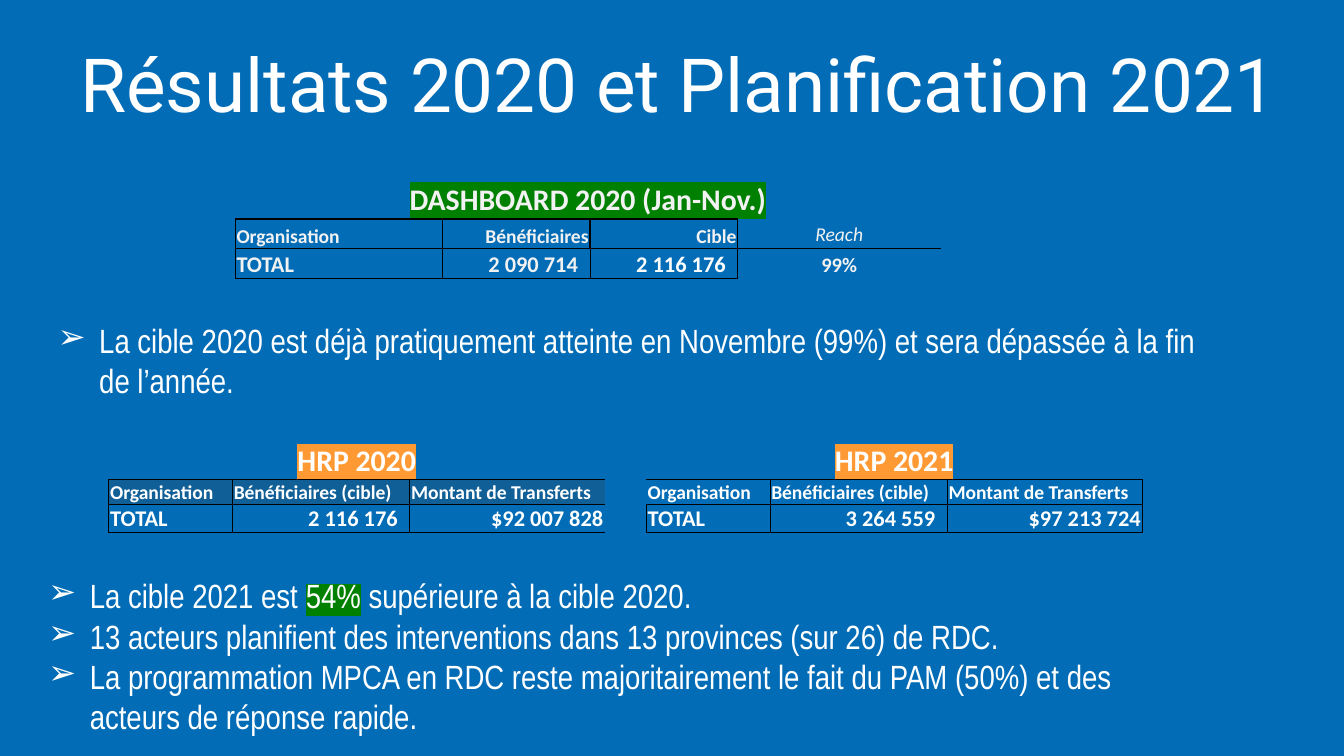
import pptx
import pptx.dml.color
import pptx.enum.text
import pptx.oxml
import pptx.oxml.ns
import pptx.util

Inches = pptx.util.Inches
Pt = pptx.util.Pt
RGBColor = pptx.dml.color.RGBColor
ALIGN = pptx.enum.text.PP_ALIGN
ANCHOR = pptx.enum.text.MSO_ANCHOR
qn = pptx.oxml.ns.qn

BLUE = RGBColor(0x02, 0x6C, 0xB6)
DARK_BLUE = RGBColor(0x10, 0x5F, 0x97)
WHITE = RGBColor(0xFF, 0xFF, 0xFF)
PALE = RGBColor(0xF2, 0xF2, 0xF2)
GREEN = RGBColor(0x00, 0x80, 0x00)
ORANGE = RGBColor(0xFF, 0x99, 0x33)
BLACK = RGBColor(0x00, 0x00, 0x00)
NO_STYLE = "{2D5ABB26-0587-4C30-8999-92F81FD0307C}"

SLIDE_WIDTH = 10
SLIDE_HEIGHT = SLIDE_WIDTH * 9 / 16

TITLE = "Résultats 2020 et Planification 2021"
# Each paragraph is a list of (text, highlight) runs.
REACH_POINTS = [[("La cible 2020 est déjà pratiquement atteinte en Novembre (99%) "
                  "et sera dépassée à la fin de l’année.", None)]]
PLAN_POINTS = [
    [("La cible 2021 est ", None), ("54%", GREEN), (" supérieure à la cible 2020.", None)],
    [("13 acteurs planifient des interventions dans 13 provinces (sur 26) de RDC.", None)],
    [("La programmation MPCA en RDC reste majoritairement le fait du PAM (50%) "
      "et des acteurs de réponse rapide.", None)],
]

DASHBOARD_COLUMNS = [1.54, 1.1, 1.1, 1.51]
DASHBOARD_ROWS = [0.29, 0.22, 0.22]
DASHBOARD_HEADER = ["Organisation", "Bénéficiaires", "Cible"]
DASHBOARD_TOTAL = ["TOTAL", "2 090 714", "2 116 176"]

PLAN_COLUMNS = [0.92, 1.32, 1.45]
PLAN_GAP = 0.31
PLAN_ROWS = [0.27, 0.18, 0.21]
PLAN_HEADER = ["Organisation", "Bénéficiaires (cible)", "Montant de Transferts"]
# title, totals, header fill, border sides of header and total cells
PLANS = [
    ("HRP 2020", ["TOTAL", "2 116 176", "$92 007 828"], DARK_BLUE,
     ["LTRB", "LTRB", "LTB"], ["LTRB", "LTRB", "LTB"]),
    ("HRP 2021", ["TOTAL", "3 264 559", "$97 213 724"], None,
     ["TRB", "LTRB", "LTRB"], ["LTRB", "LTRB", "LTRB"]),
]
TRAILING_GAP = 0.09


def highlight(run, color):
    properties = run._r.get_or_add_rPr()
    mark = properties.makeelement(qn("a:highlight"), {})
    mark.append(mark.makeelement(qn("a:srgbClr"), {"val": str(color)}))
    properties.append(mark)


def add_bullet(paragraph, character, font):
    properties = paragraph._p.get_or_add_pPr()
    properties.set("marL", str(Inches(0.31)))
    properties.set("indent", str(-Inches(0.31)))
    properties.append(properties.makeelement(qn("a:buFont"), {"typeface": font}))
    properties.append(properties.makeelement(qn("a:buChar"), {"char": character}))


def add_text(slide, left, top, width, height, paragraphs, font, size, bullet=None):
    box = slide.shapes.add_textbox(Inches(left), Inches(top), Inches(width), Inches(height))
    frame = box.text_frame
    frame.word_wrap = True
    for index, runs in enumerate(paragraphs):
        paragraph = frame.paragraphs[0] if index == 0 else frame.add_paragraph()
        if bullet:
            add_bullet(paragraph, bullet, font)
        paragraph.font.name = font
        paragraph.font.size = Pt(size)
        paragraph.font.color.rgb = WHITE
        for text, color in runs:
            run = paragraph.add_run()
            run.text = text
            if color:
                highlight(run, color)


def add_table(slide, left, top, columns, rows):
    """Add a plain, transparent table without style or banding."""
    frame = slide.shapes.add_table(len(rows), len(columns), Inches(left), Inches(top),
                                   Inches(sum(columns)), Inches(sum(rows)))
    table = frame.table
    table.first_row = table.horz_banding = False
    table._tbl.tblPr.find(qn("a:tableStyleId")).text = NO_STYLE
    for column, width in zip(table.columns, columns):
        column.width = Inches(width)
    for row, height in zip(table.rows, rows):
        row.height = Inches(height)
    for cell in table.iter_cells():
        cell.margin_left = cell.margin_right = cell.margin_top = Inches(0.01)
        cell.margin_bottom = 0
        cell.text_frame.paragraphs[0].font.size = Pt(10.5)
    return table


def set_borders(cell, sides, weight):
    """Draw the given sides in black and clear the others."""
    properties = cell._tc.get_or_add_tcPr()
    for position, side in enumerate("LRTB"):
        line = properties.makeelement(qn("a:ln" + side), {"w": str(Pt(weight))})
        if side in sides:
            fill = line.makeelement(qn("a:solidFill"), {})
            fill.append(fill.makeelement(qn("a:srgbClr"), {"val": str(BLACK)}))
        else:
            fill = line.makeelement(qn("a:noFill"), {})
        line.append(fill)
        properties.insert(position, line)


def fill_cell(cell, text, size, align=ALIGN.LEFT, anchor=ANCHOR.BOTTOM, color=PALE,
              bold=True, fill=None, mark=None, sides="", weight=0.5):
    cell.vertical_anchor = anchor
    if fill:
        cell.fill.solid()
        cell.fill.fore_color.rgb = fill
    else:
        cell.fill.background()
    paragraph = cell.text_frame.paragraphs[0]
    paragraph.alignment = align
    font = paragraph.font
    font.name, font.size, font.bold = "Calibri", Pt(size), bold
    font.color.rgb = color
    run = paragraph.add_run()
    run.text = text
    if mark:
        highlight(run, mark)
    if sides:
        set_borders(cell, sides, weight)


def add_heading(table, first, last, text, color, mark):
    cell = table.cell(0, first)
    cell.merge(table.cell(0, last))
    fill_cell(cell, text, 16, ALIGN.CENTER, ANCHOR.MIDDLE, color, mark=mark)


def add_dashboard(slide):
    table = add_table(slide, 1.75, 1.34, DASHBOARD_COLUMNS, DASHBOARD_ROWS)
    add_heading(table, 0, 3, "DASHBOARD 2020 (Jan-Nov.)", PALE, GREEN)
    for column, (header, total) in enumerate(zip(DASHBOARD_HEADER, DASHBOARD_TOTAL)):
        align = ALIGN.RIGHT if column else ALIGN.LEFT
        fill_cell(table.cell(1, column), header, 10.5, align, sides="LTRB", weight=0.75)
        cell = table.cell(2, column)
        fill_cell(cell, total, 12, align, color=WHITE if column == 2 else PALE, sides="LTRB")
        if column:
            cell.margin_right = Inches(TRAILING_GAP)
    reach = table.cell(1, 3)
    fill_cell(reach, "Reach", 10.5, ALIGN.CENTER, ANCHOR.MIDDLE,
              bold=False, sides="LB", weight=0.75)
    reach.text_frame.paragraphs[0].font.italic = True
    fill_cell(table.cell(2, 3), "99%", 11, ALIGN.CENTER, sides="LT")


def add_plans(slide):
    table = add_table(slide, 0.81, 3.29, PLAN_COLUMNS + [PLAN_GAP] + PLAN_COLUMNS, PLAN_ROWS)
    count = len(PLAN_COLUMNS)
    table.cell(0, count).merge(table.cell(2, count))
    for number, (title, totals, fill, header_sides, total_sides) in enumerate(PLANS):
        first = number * (count + 1)
        add_heading(table, first, first + count - 1, title, WHITE, ORANGE)
        for offset in range(count):
            fill_cell(table.cell(1, first + offset), PLAN_HEADER[offset], 10.5,
                      color=WHITE, fill=fill, sides=header_sides[offset])
            cell = table.cell(2, first + offset)
            fill_cell(cell, totals[offset], 12, ALIGN.RIGHT if offset else ALIGN.LEFT,
                      color=WHITE, sides=total_sides[offset])
            if offset == 1:
                cell.margin_right = Inches(TRAILING_GAP)


def main():
    presentation = pptx.Presentation()
    presentation.slide_width = Inches(SLIDE_WIDTH)
    presentation.slide_height = Inches(SLIDE_HEIGHT)
    slide = presentation.slides.add_slide(presentation.slide_layouts[6])
    slide.background.fill.solid()
    slide.background.fill.fore_color.rgb = BLUE
    add_text(slide, 0.5, 0.23, 9.5, 0.77, [[(TITLE, None)]], "Roboto", 40)
    add_text(slide, 0.33, 2.33, 8.82, 1.04, REACH_POINTS, "Arial Narrow", 18, "➢")
    add_dashboard(slide)
    add_plans(slide)
    add_text(slide, 0.26, 4.23, 8.82, 1.65, PLAN_POINTS, "Arial Narrow", 18, "➢")
    presentation.save("out.pptx")


if __name__ == "__main__":
    main()
